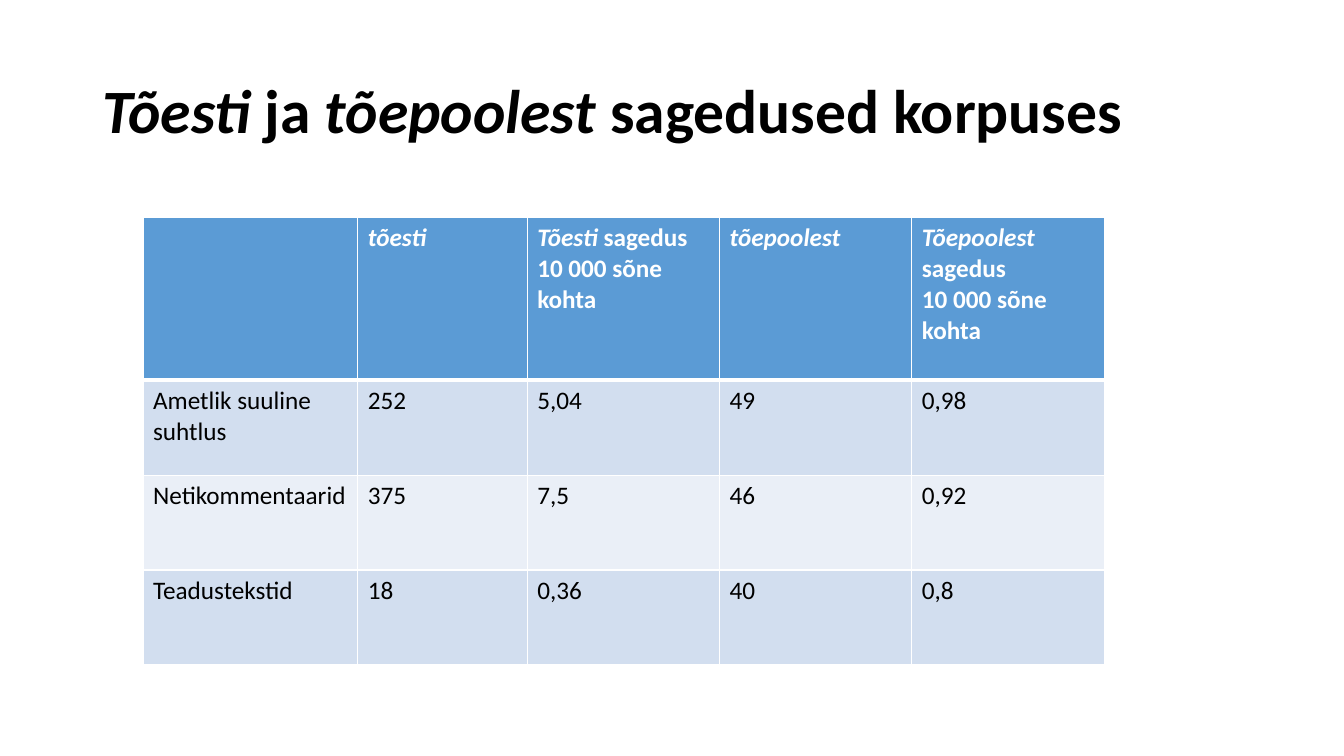
from dataclasses import dataclass
from typing import NamedTuple

from lxml.etree import SubElement
from pptx import Presentation
from pptx.dml.color import RGBColor as RGB
from pptx.enum.text import MSO_ANCHOR as Anchor, MSO_AUTO_SIZE as AutoSize, PP_ALIGN as Align
from pptx.oxml.ns import qn
from pptx.util import Pt


@dataclass(frozen=True)
class Theme:
    font: str = "Calibri"
    title_size: float = 44
    cell_size: float = 18
    text: str = "000000"
    light: str = "FFFFFF"
    header: str = "5B9BD5"
    bands: tuple[str, str] = ("D2DEEF", "EAEFF7")
    rule: float = 1
    header_rule: float = 3


class Span(NamedTuple):
    text: str
    italic: bool = False


@dataclass(frozen=True)
class CellStyle:
    fill: str
    color: str
    bold: bool
    bottom_rule: float


Lines = list[list[Span]]
THEME = Theme()

# Content
TITLE = [Span("Tõesti", True), Span(" ja "), Span("tõepoolest", True),
         Span(" sagedused korpuses")]


def frequency_header(word: str) -> Lines:
    return [[Span(word, True), Span(" sagedus")], [Span("10 000 sõne kohta")]]


HEADER: list[Lines] = [
    [],
    [[Span("tõesti", True)]],
    frequency_header("Tõesti"),
    [[Span("tõepoolest", True)]],
    frequency_header("Tõepoolest"),
]
BODY = [
    ("Ametlik suuline suhtlus", "252", "5,04", "49", "0,98"),
    ("Netikommentaarid", "375", "7,5", "46", "0,92"),
    ("Teadustekstid", "18", "0,36", "40", "0,8"),
]

# Table geometry in points
TABLE_LEFT, TABLE_TOP = 102.2, 155.6
COL_WIDTHS = (153.4, 121, 137.4, 137.4, 137.4)
ROW_HEIGHTS = (116, 67.8, 67.8, 67.8)


def write_runs(p, spans: list[Span], size: float, color: str, bold: bool) -> None:
    for span in spans:
        r = p.add_run()
        r.text = span.text
        formats = {"name": THEME.font, "size": Pt(size), "bold": bold, "italic": span.italic}
        for name, value in formats.items():
            setattr(r.font, name, value)
        r.font.color.rgb = RGB.from_string(color)


def add_border(cell, side: str, width: float) -> None:
    ln = SubElement(cell._tc.get_or_add_tcPr(), qn(f"a:ln{side}"), w=str(Pt(width)))
    fill = SubElement(ln, qn("a:solidFill"))
    SubElement(fill, qn("a:srgbClr"), val=THEME.light)


def fill_cell(cell, lines: Lines, style: CellStyle, top_rule: float) -> None:
    # Borders come before the fill in the cell properties
    rules = {"L": THEME.rule, "R": THEME.rule, "T": top_rule, "B": style.bottom_rule}
    for side, width in rules.items():
        add_border(cell, side, width)
    cell.fill.solid()
    cell.fill.fore_color.rgb = RGB.from_string(style.fill)
    tf = cell.text_frame
    for i, spans in enumerate(lines):
        p = tf.add_paragraph() if i else tf.paragraphs[0]
        write_runs(p, spans, THEME.cell_size, style.color, style.bold)


def add_title(s) -> None:
    title = s.shapes.title
    box = {"left": 66, "top": 28.8, "width": 828, "height": 104.4}
    for name, value in box.items():
        setattr(title, name, Pt(value))
    tf = title.text_frame
    frame = {"word_wrap": True, "auto_size": AutoSize.NONE, "vertical_anchor": Anchor.MIDDLE}
    for name, value in frame.items():
        setattr(tf, name, value)
    p = tf.paragraphs[0]
    p.alignment, p.line_spacing = Align.LEFT, 0.9
    write_runs(p, TITLE, THEME.title_size, THEME.text, True)


def add_frequency_table(s) -> None:
    rows = [HEADER] + [[[[Span(value)]] for value in row] for row in BODY]
    table = s.shapes.add_table(
        len(rows), len(COL_WIDTHS), Pt(TABLE_LEFT), Pt(TABLE_TOP),
        Pt(sum(COL_WIDTHS)), Pt(sum(ROW_HEIGHTS))).table
    for col, width in zip(table.columns, COL_WIDTHS):
        col.width = Pt(width)
    for row, height in zip(table.rows, ROW_HEIGHTS):
        row.height = Pt(height)

    # Header row, then alternating bands
    header = CellStyle(THEME.header, THEME.light, True, THEME.header_rule)
    bands = [CellStyle(fill, THEME.text, False, THEME.rule) for fill in THEME.bands]
    for i, row in enumerate(rows):
        style = bands[(i - 1) % 2] if i else header
        top_rule = THEME.header_rule if i == 1 else THEME.rule
        for j, lines in enumerate(row):
            fill_cell(table.cell(i, j), lines, style, top_rule)


def main() -> None:
    prs = Presentation()
    prs.slide_width, prs.slide_height = Pt(960), Pt(540)
    s = prs.slides.add_slide(prs.slide_layouts.get_by_name("Title Only"))
    add_title(s)
    add_frequency_table(s)
    prs.save("out.pptx")


if __name__ == "__main__":
    main()
